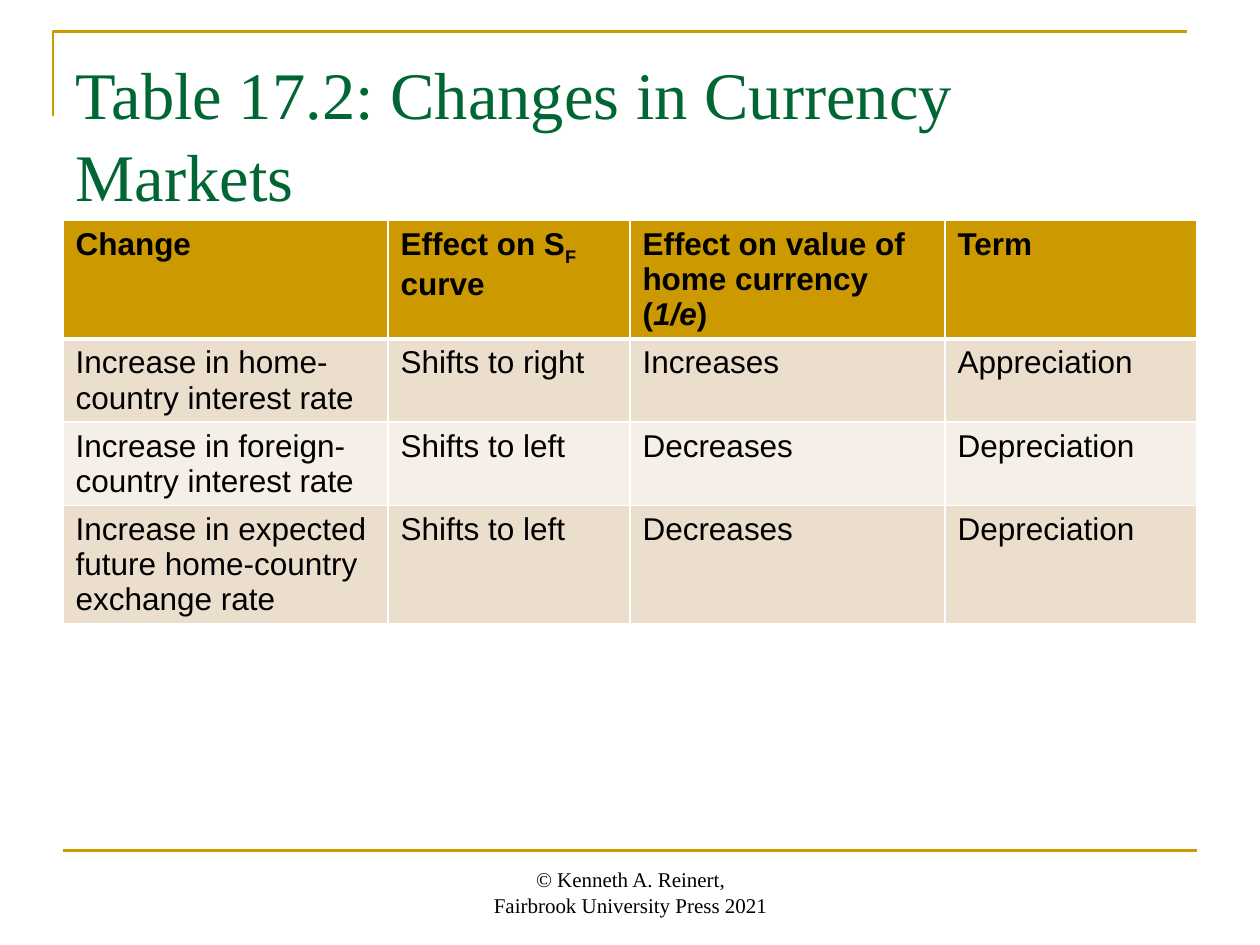
from lxml.etree import SubElement
from pptx import Presentation
from pptx.dml.color import RGBColor
from pptx.enum.shapes import MSO_CONNECTOR
from pptx.enum.text import MSO_ANCHOR, PP_ALIGN
from pptx.oxml.ns import qn
from pptx.util import Inches, Pt

COLORS = {
    "gold": "CC9900", "green": "006633", "black": "000000", "white": "FFFFFF",
    "band_dark": "ECDECC", "band_light": "F6EFE7",
}
TITLE = "Table 17.2: Changes in Currency Markets"
FOOTER = ["© Kenneth A. Reinert,", "Fairbrook University Press 2021"]

# A cell is a list of paragraphs; a paragraph is text or a list of (text, style) runs.
HEADER = [
    ["Change"],
    [[("Effect on S", ""), ("F", "subscript")], "curve"],
    [[("Effect on value of home currency (", ""), ("1/e", "italic"), (")", "")]],
    ["Term"],
]
ROWS = [
    ["Increase in home-country interest rate", "Shifts to right", "Increases", "Appreciation"],
    ["Increase in foreign-country interest rate", "Shifts to left", "Decreases", "Depreciation"],
    ["Increase in expected future home-country exchange rate", "Shifts to left",
     "Decreases", "Depreciation"],
]
COLUMN_WIDTHS = [2.58, 1.92, 2.5, 2]
ROW_HEIGHT = 0.41
LEFT, WIDTH = 0.5, 9


def color(name):
    return RGBColor.from_string(COLORS[name])


def write_text(text_frame, paragraphs, size, font="Arial", fill="black", bold=False,
               align=PP_ALIGN.LEFT):
    text_frame.word_wrap = True
    for index, content in enumerate(paragraphs):
        paragraph = text_frame.add_paragraph() if index else text_frame.paragraphs[0]
        paragraph.alignment = align
        runs = [(content, "")] if isinstance(content, str) else content
        for text, style in runs:
            run = paragraph.add_run()
            run.text = text
            run.font.name, run.font.size, run.font.bold = font, Pt(size), bold
            run.font.italic = style == "italic"
            run.font.color.rgb = color(fill)
            if style == "subscript":
                run.font._element.set("baseline", "-25000")


def set_borders(cell, bottom):
    properties = cell._tc.get_or_add_tcPr()
    widths = {"a:lnL": 1, "a:lnR": 1, "a:lnT": 1, "a:lnB": bottom}
    for position, (tag, width) in enumerate(widths.items()):
        line = SubElement(properties, qn(tag), w=str(Pt(width)))
        fill = SubElement(line, qn("a:solidFill"))
        SubElement(fill, qn("a:srgbClr"), val=COLORS["white"])
        properties.insert(position, line)  # borders come before the cell fill


def add_frame_lines(slide):
    builder = slide.shapes.build_freeform(Inches(0.42), Inches(0.92))
    builder.add_line_segments(
        [(Inches(0.42), Inches(0.25)), (Inches(9.42), Inches(0.25))], close=False)
    corner = builder.convert_to_shape()
    corner.shadow.inherit = False
    corner.fill.background()
    rule = slide.shapes.add_connector(
        MSO_CONNECTOR.STRAIGHT, Inches(LEFT), Inches(6.75), Inches(LEFT + WIDTH), Inches(6.75))
    SubElement(rule._element.spPr, qn("a:effectLst"))
    for shape in (corner, rule):
        shape.line.color.rgb = color("gold")
        shape.line.width = Pt(1.5)


def format_title(slide):
    title = slide.shapes.title
    title.left, title.top = Inches(LEFT), Inches(0.3)
    title.width, title.height = Inches(WIDTH), Inches(1.25)
    title.text_frame.vertical_anchor = MSO_ANCHOR.TOP
    title.text_frame.margin_top = Inches(0.1)
    write_text(title.text_frame, [TITLE], 38, font="Times New Roman", fill="green")
    title.text_frame.paragraphs[0].line_spacing = 1.03


def add_currency_table(slide):
    rows = [HEADER] + [[[text] for text in row] for row in ROWS]
    table = slide.shapes.add_table(
        len(rows), len(COLUMN_WIDTHS), Inches(LEFT), Inches(1.75),
        Inches(WIDTH), Inches(ROW_HEIGHT * len(rows))).table
    for column, width in zip(table.columns, COLUMN_WIDTHS):
        column.width = Inches(width)
    for row_index, row in enumerate(rows):
        table.rows[row_index].height = Inches(ROW_HEIGHT)
        is_header = row_index == 0
        band = "gold" if is_header else ("band_light", "band_dark")[row_index % 2]
        for column_index, paragraphs in enumerate(row):
            cell = table.cell(row_index, column_index)
            cell.fill.solid()
            cell.fill.fore_color.rgb = color(band)
            set_borders(cell, bottom=3 if is_header else 1)
            write_text(cell.text_frame, paragraphs, 18, bold=is_header)


def add_footer(slide):
    footer = slide.shapes.add_textbox(Inches(3.42), Inches(6.83), Inches(3.17), Inches(0.5))
    footer.text_frame.vertical_anchor = MSO_ANCHOR.BOTTOM
    write_text(footer.text_frame, FOOTER, 12, font="Times New Roman", align=PP_ALIGN.CENTER)


def main():
    presentation = Presentation()
    presentation.slide_width, presentation.slide_height = Inches(10), Inches(7.5)
    slide = presentation.slides.add_slide(presentation.slide_layouts[5])
    add_frame_lines(slide)
    format_title(slide)
    add_currency_table(slide)
    add_footer(slide)
    presentation.save("out.pptx")


if __name__ == "__main__":
    main()
